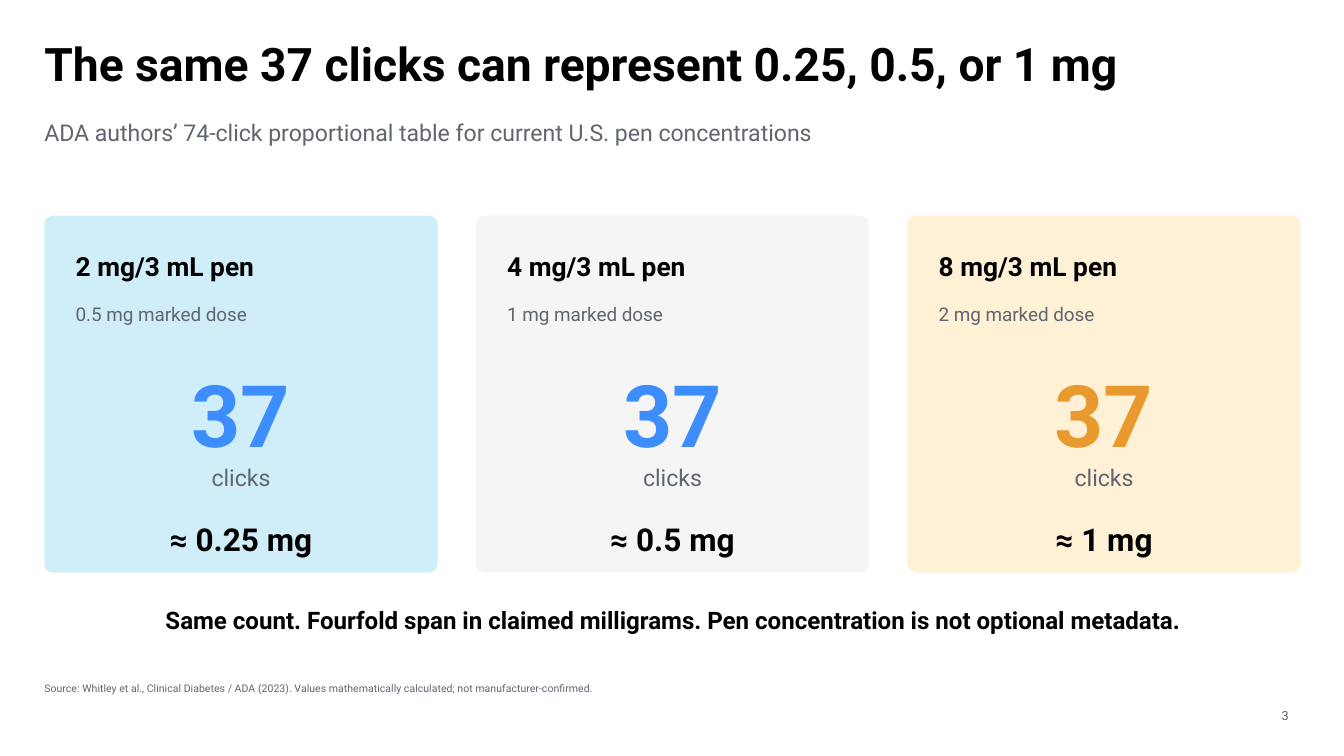
"""Build the slide comparing 37 clicks across three pen strengths."""
from pptx import Presentation
from pptx.dml.color import RGBColor
from pptx.enum.shapes import MSO_SHAPE
from pptx.enum.text import MSO_ANCHOR, PP_ALIGN
from pptx.util import Inches, Pt

BLACK, GRAY, BLUE, AMBER = "000000", "5F6670", "3D8DFF", "E99A2F"
LEFT, MID, RIGHT = PP_ALIGN.LEFT, PP_ALIGN.CENTER, PP_ALIGN.RIGHT
EDGE, STEP, WIDE, INSET = 0.44, 4.28, 3.9, 0.31
FULL = 2 * STEP + WIDE

deck = Presentation()
deck.slide_width, deck.slide_height = Inches(13.33), Inches(7.5)
slide = deck.slides.add_slide(deck.slide_layouts[6])


def paint(color, shade):
    color.rgb = RGBColor.from_string(shade)


def write(words, x, y, w, h, size, shade, bold=False, align=LEFT, anchor=MSO_ANCHOR.TOP):
    frame = slide.shapes.add_textbox(Inches(x), Inches(y), Inches(w), Inches(h)).text_frame
    frame.word_wrap = True
    frame.vertical_anchor = anchor
    frame.margin_left = frame.margin_right = frame.margin_top = frame.margin_bottom = 0
    para = frame.paragraphs[0]
    para.alignment = align
    run = para.add_run()
    run.text = words
    run.font.name, run.font.size, run.font.bold = "Roboto", Pt(size), bold
    paint(run.font.color, shade)


write("The same 37 clicks can represent 0.25, 0.5, or 1 mg", EDGE, 0.35, FULL, 0.96, 33, BLACK, True)
write("ADA authors’ 74-click proportional table for current U.S. pen concentrations",
      EDGE, 1.17, 11.46, 0.46, 16.5, GRAY)
write("Source: Whitley et al., Clinical Diabetes / ADA (2023). "
      "Values mathematically calculated; not manufacturer-confirmed.",
      EDGE, 6.77, 11.67, 0.33, 7.5, GRAY)
write("3", 12.34, 6.98, 0.44, 0.19, 9, GRAY, align=RIGHT, anchor=MSO_ANCHOR.BOTTOM)

pens = [
    ("2 mg/3 mL pen", "0.5 mg marked dose", "≈ 0.25 mg", "D0EDFA", BLUE),
    ("4 mg/3 mL pen", "1 mg marked dose", "≈ 0.5 mg", "F5F5F5", BLUE),
    ("8 mg/3 mL pen", "2 mg marked dose", "≈ 1 mg", "FFF1D6", AMBER),
]
for col, (pen, mark, dose, back, tint) in enumerate(pens):
    x = EDGE + col * STEP
    card = slide.shapes.add_shape(MSO_SHAPE.ROUNDED_RECTANGLE,
                                  Inches(x), Inches(2.14), Inches(WIDE), Inches(3.54))
    card.adjustments[0] = 0.024
    card.shadow.inherit = False
    card.fill.solid()
    paint(card.fill.fore_color, back)
    card.line.fill.background()
    rows = [
        (pen, 2.48, 0.44, 18.8, BLACK, True, LEFT),
        (mark, 3, 0.35, 13.5, GRAY, False, LEFT),
        ("37", 3.59, 1.04, 61.5, tint, True, MID),
        ("clicks", 4.6, 0.31, 16.5, GRAY, False, MID),
        (dose, 5.16, 0.5, 22.5, BLACK, True, MID),
    ]
    for words, y, h, *style in rows:
        write(words, x + INSET, y, WIDE - 2 * INSET, h, *style)

write("Same count. Fourfold span in claimed milligrams. Pen concentration is not optional metadata.",
      EDGE, 6.01, FULL, 0.47, 17.2, BLACK, True, MID)

deck.save("out.pptx")
